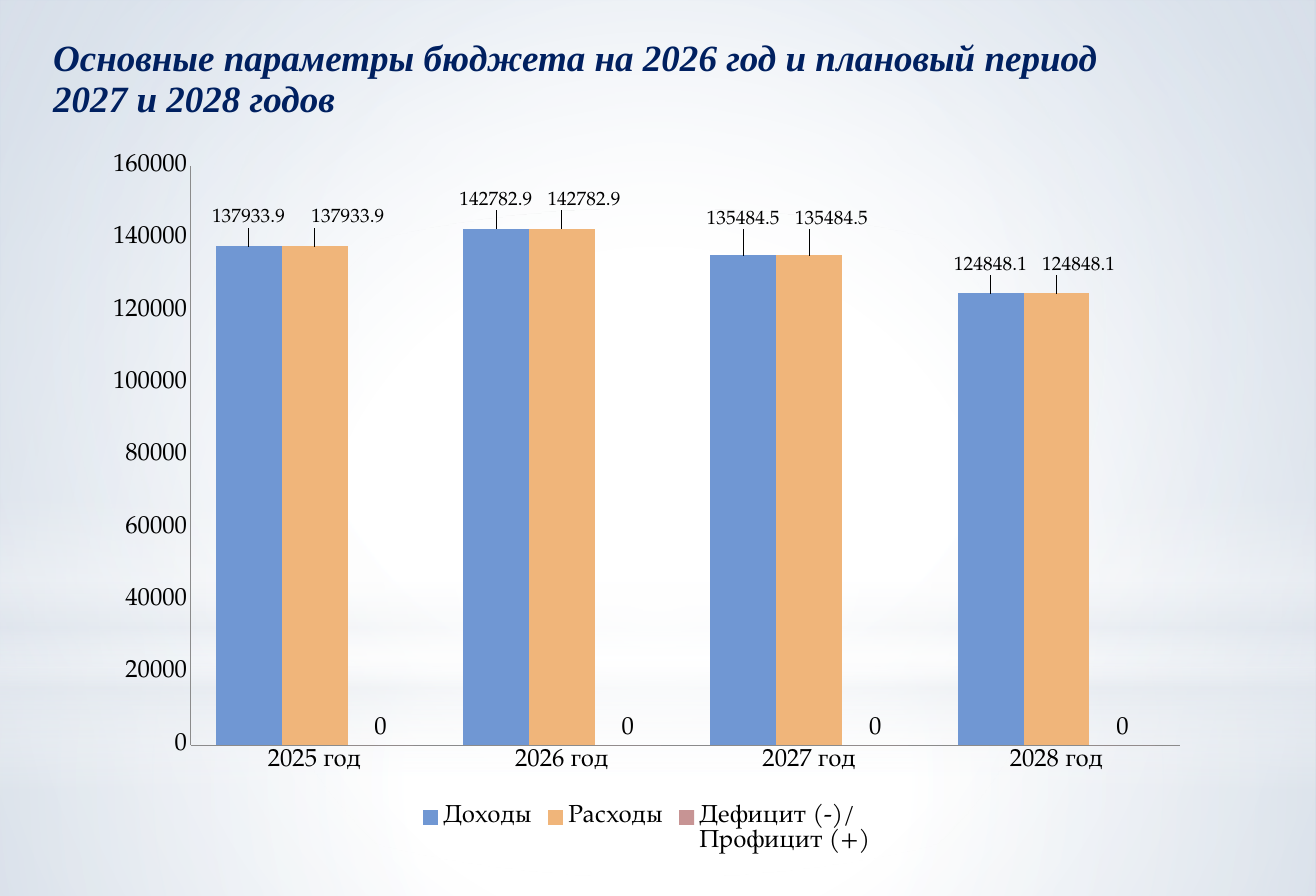
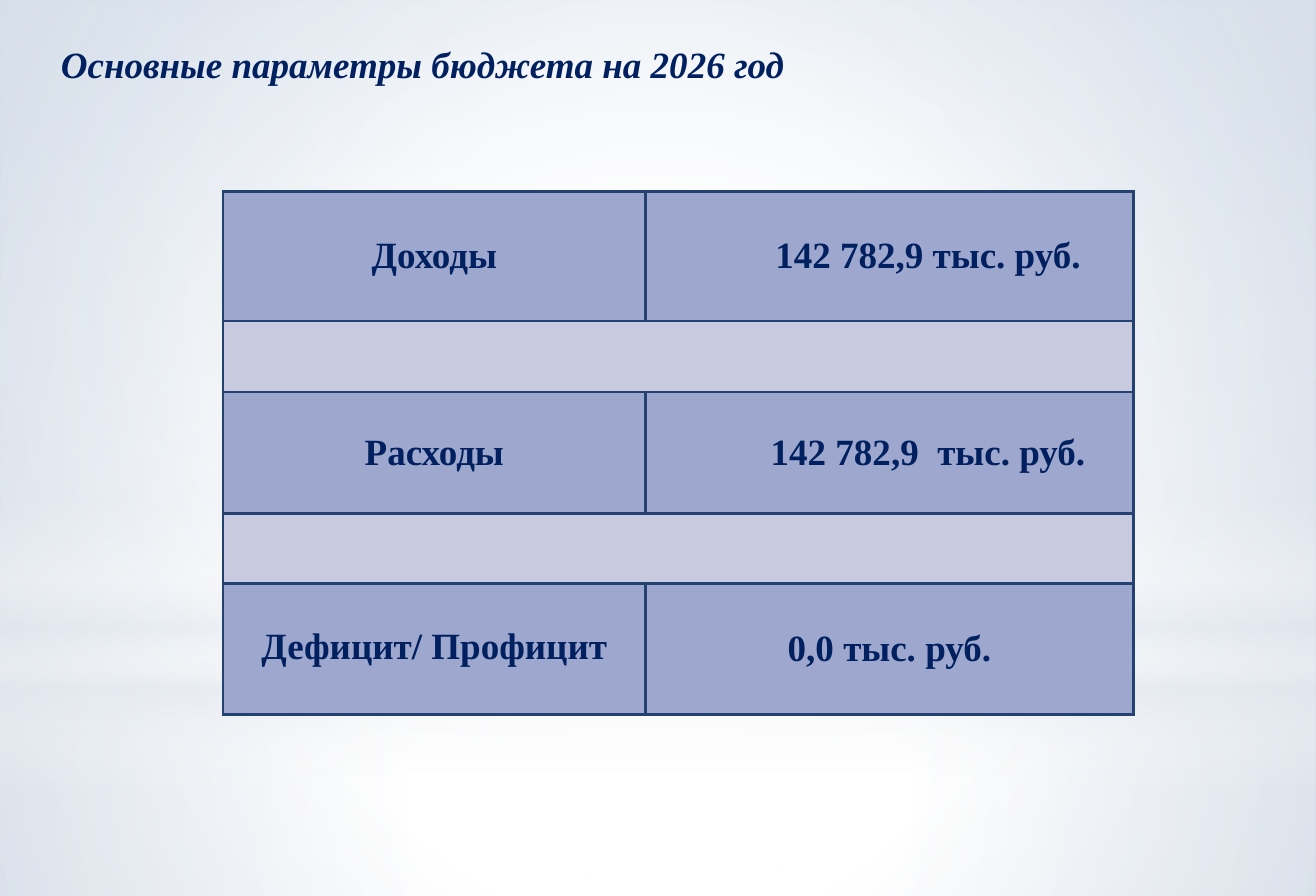
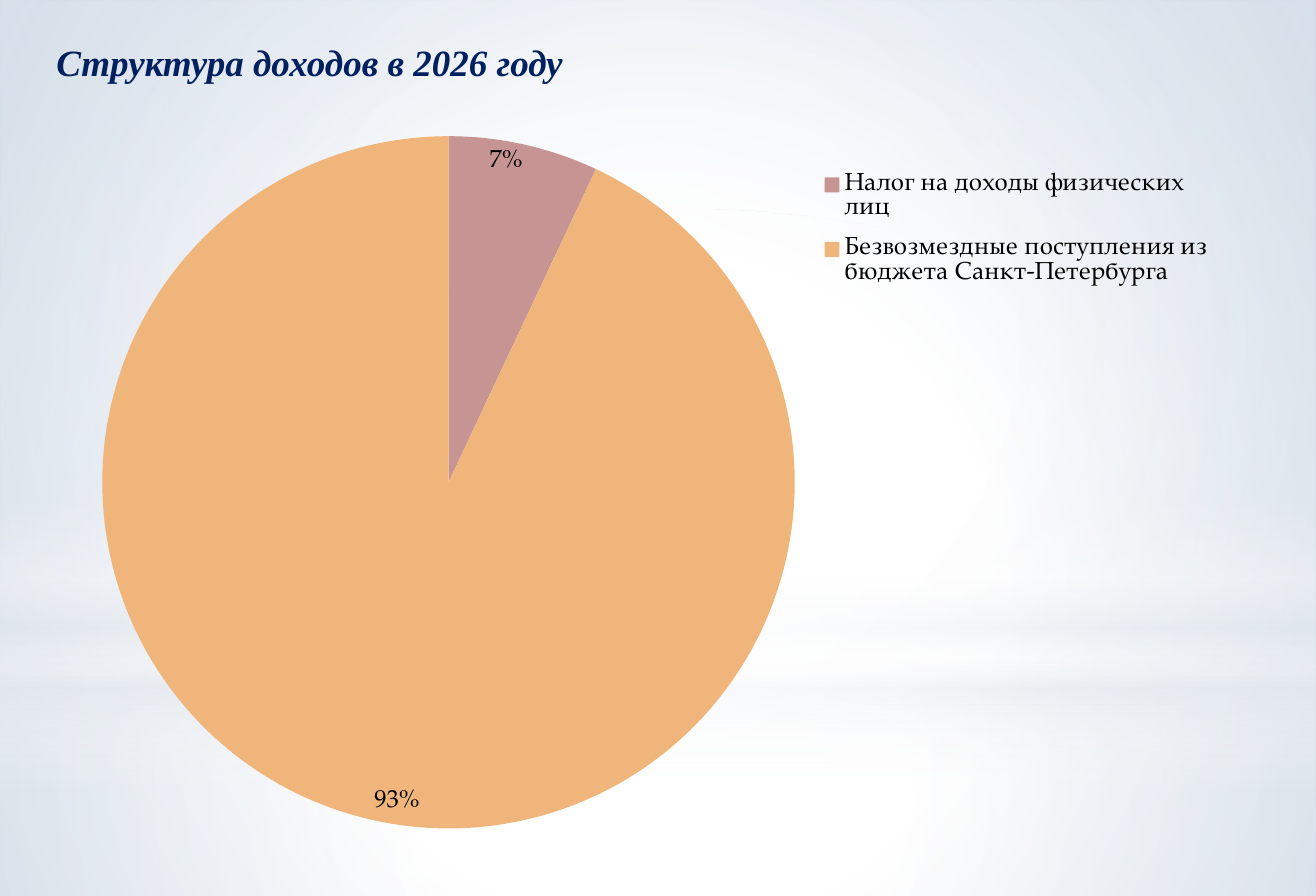
from lxml.etree import SubElement as Sub, Element
from pptx import Presentation
from pptx.chart.data import CategoryChartData as Data
from pptx.dml.color import RGBColor as RGB
from pptx.enum.chart import XL_CHART_TYPE as Kind, XL_LABEL_POSITION as Spot
from pptx.enum.chart import XL_LEGEND_POSITION as Side, XL_TICK_MARK as Tick
from pptx.enum.shapes import MSO_SHAPE as Form
from pptx.enum.text import MSO_ANCHOR as Anchor, PP_ALIGN as Align
from pptx.oxml.ns import qn
from pptx.util import Cm, Pt

HUES = {
    "white": "FFFFFF", "mist": "E4E9EF", "sky": "AABDD5",
    "navy": "002060", "black": "000000", "axis": "8B8B8B",
    "blue": "7097D3", "sand": "F0B57A", "rose": "C79494",
    "edge": "234271", "cell": "9EA8CE", "gap": "C8CADF",
}
SERIF, BOOK = "Times New Roman", "TeX Gyre Pagella"
WIDE, HIGH = 33.86, 23.06


def shade(item, fill, stops, rect=None):
    """Fill item with a gradient: round about rect, or downward without it."""
    fill.gradient()
    grad = item.element.find(".//" + qn("a:gradFill"))
    for kid in list(grad):
        grad.remove(kid)
    row = Sub(grad, qn("a:gsLst"))
    for pos, hue, alpha in stops:
        stop = Sub(row, qn("a:gs"), pos=str(pos * 1000))
        tint = Sub(stop, qn("a:srgbClr"), val=HUES[hue])
        Sub(tint, qn("a:alpha"), val=str(alpha * 1000))
    if rect:
        way = Sub(grad, qn("a:path"), path="circle")
        Sub(way, qn("a:fillToRect"), {k: str(v * 1000) for k, v in zip("ltrb", rect)})
    else:
        Sub(grad, qn("a:lin"), ang="5400000", scaled="0")


def place(node, at, tags):
    """Give a chart part a manual layout, as child number at."""
    for old in node.findall(qn("c:layout")):
        node.remove(old)
    lay = Element(qn("c:layout"))
    node.insert(at, lay)
    man = Sub(lay, qn("c:manualLayout"))
    for tag, val in tags.items():
        Sub(man, qn("c:" + tag), val=str(val))


deck = Presentation()
deck.slide_width, deck.slide_height = Cm(WIDE), Cm(HIGH)
blank = deck.slide_layouts[6]

# Slides and their titles
HEADS = [
    ("Основные параметры бюджета на 2026 год и плановый период 2027 и 2028 годов",
     1.37, 0.99, 0.93),
    ("Основные параметры бюджета на 2026 год", 1.57, 1.07, 1),
    ("Структура доходов в 2026 году", 1.45, 1.02, 1),
]
slides = []
for text, left, top, space in HEADS:
    slide = deck.slides.add_slide(blank)
    slides.append(slide)
    frame = slide.shapes.add_textbox(Cm(left), Cm(top), Cm(28.63), Cm(1.2)).text_frame
    frame.word_wrap = True
    frame.margin_left = frame.margin_right = frame.margin_top = frame.margin_bottom = 0
    frame.text = text
    para = frame.paragraphs[0]
    para.line_spacing = space
    font = para.runs[0].font
    font.name, font.size, font.bold, font.italic = SERIF, Pt(27), True, True
    font.color.rgb = RGB.from_string(HUES["navy"])

# Shared backdrop on the master
master = deck.slide_master
shade(master, master.background.fill,
      [(0, "white", 100), (42, "white", 100), (100, "sky", 100)], (24, 44, 24, 12))
MID = (50, 50, 50, 50)
BANDS = [
    (Form.RECTANGLE, 17.17, 5.89,
     [(0, "white", 91), (37, "white", 76), (100, "mist", 79)], MID),
    (Form.RECTANGLE, 0, 17.17,
     [(0, "white", 89), (48, "white", 62), (100, "mist", 79)], MID),
    (Form.RECTANGLE, 12.67, 7.7,
     [(0, "white", 0), (29, "white", 30), (45, "mist", 40),
      (55, "white", 26), (65, "mist", 60), (100, "white", 0)], None),
    (Form.OVAL, 5.38, 17.17, [(0, "white", 100), (56, "white", 0)], MID),
]
for spot, (form, top, high, stops, rect) in enumerate(BANDS):
    band = slides[0].shapes.add_shape(form, 0, Cm(top), Cm(WIDE), Cm(high))
    band.shadow.inherit = False
    band.line.fill.background()
    shade(band, band.fill, stops, rect)
    master.shapes.element.insert(2 + spot, band.element)

# Column chart
data = Data()
data.categories = [f"{year} год" for year in range(2025, 2029)]
sums = [137933.9, 142782.9, 135484.5, 124848.1]
data.add_series("Доходы", sums)
data.add_series("Расходы", sums)
data.add_series("Дефицит (-)/\nПрофицит (+)", [0] * 4)
bars = slides[0].shapes.add_chart(Kind.COLUMN_CLUSTERED, Cm(2.34), Cm(3.73),
                                  Cm(28.6), Cm(18.39), data).chart
plot = bars.plots[0]
plot.gap_width, plot.overlap, plot.vary_by_categories = 75, 0, False
for ser, hue in zip(plot.series, ("blue", "sand", "rose")):
    ser.format.fill.solid()
    ser.format.fill.fore_color.rgb = RGB.from_string(HUES[hue])
    ser.data_labels.show_value = True
    ser.data_labels.position = Spot.OUTSIDE_END
for ser in list(plot.series)[:2]:
    for num in range(len(sums)):
        label = ser.points[num].data_label
        label.font.size = Pt(14)
        label.position = Spot.OUTSIDE_END
for axis in (bars.category_axis, bars.value_axis):
    axis.has_major_gridlines = False
    axis.major_tick_mark = axis.minor_tick_mark = Tick.NONE
    axis.format.line.color.rgb = RGB.from_string(HUES["axis"])
bars.value_axis.minimum_scale, bars.value_axis.maximum_scale = 0, 160000
bars.value_axis.major_unit = 20000

# Label shifts: first the income bars, then the spending bars
SHIFTS = [(0, -0.02), (0, -0.02), (0, -0.03), (0, -0.02),
          (0.03, -0.02), (0.02, -0.02), (0.02, -0.03), (0.02, -0.02)]
for node, (x, y) in zip(bars.element.iter(qn("c:dLbl")), SHIFTS):
    place(node, 1, {"x": x, "y": y})

# Table
table = slides[1].shapes.add_table(5, 2, Cm(5.74), Cm(4.93), Cm(23.42), Cm(13.46)).table
table.first_row = table.horz_banding = False
for col, wide in zip(table.columns, (10.87, 12.55)):
    col.width = Cm(wide)
for row, high in zip(table.rows, (3.33, 1.83, 3.12, 1.8, 3.38)):
    row.height = Cm(high)
ROWS = [("Доходы", "142 782,9 тыс. руб."), None,
        ("Расходы", "142 782,9  тыс. руб."), None,
        ("Дефицит/ Профицит", "0,0 тыс. руб.")]
for r, words in enumerate(ROWS):
    if not words:
        table.cell(r, 0).merge(table.cell(r, 1))
    for c in range(2):
        cell = table.cell(r, c)
        props = cell._tc.get_or_add_tcPr()
        for side in "LRTB":
            line = Sub(props, qn("a:ln" + side), w=str(Pt(2.25)))
            Sub(Sub(line, qn("a:solidFill")), qn("a:srgbClr"), val=HUES["edge"])
        cell.fill.solid()
        cell.fill.fore_color.rgb = RGB.from_string(HUES["cell" if words else "gap"])
        if not words:
            continue
        cell.margin_left = cell.margin_right = cell.margin_top = cell.margin_bottom = 0
        if c == 1 and r < 4:
            cell.margin_left = Cm(1.98)
        cell.vertical_anchor = Anchor.MIDDLE
        cell.text_frame.text = words[c]
        para = cell.text_frame.paragraphs[0]
        para.alignment = Align.CENTER
        if (r, c) == (4, 0):
            para.line_spacing = 0.86
        font = para.runs[0].font
        font.name, font.size, font.bold = SERIF, Pt(27), True
        font.color.rgb = RGB.from_string(HUES["navy"])

# Pie chart
data = Data()
data.categories = ["Налог на доходы физических лиц",
                   "Безвозмездные поступления из\nбюджета Санкт-Петербурга"]
data.add_series("Доходы", [7, 93])
pie = slides[2].shapes.add_chart(Kind.PIE, Cm(2.34), Cm(3.12),
                                 Cm(29.21), Cm(18.59), data).chart
plot = pie.plots[0]
for num, hue in enumerate(("rose", "sand")):
    fill = plot.series[0].points[num].format.fill
    fill.solid()
    fill.fore_color.rgb = RGB.from_string(HUES[hue])
labels = plot.series[0].data_labels
labels.show_value, labels.show_percentage = False, True
labels.number_format, labels.number_format_is_linked = "0%", False
labels.position = Spot.INSIDE_END

# Shared chart style, plot areas and legends
EDGE = {"xMode": "edge", "yMode": "edge"}
for chart, side, box in (
        (bars, Side.BOTTOM, {"x": 0.09, "y": 0.03, "w": 0.89, "h": 0.81}),
        (pie, Side.RIGHT, {"x": 0.01, "y": 0.02, "w": 0.61, "h": 0.96})):
    chart.has_title = False
    chart.font.name, chart.font.size = BOOK, Pt(18)
    chart.font.color.rgb = RGB.from_string(HUES["black"])
    chart.has_legend = True
    chart.legend.position = side
    chart.legend.include_in_layout = False
    area = chart.element.find(".//" + qn("c:plotArea"))
    place(area, 0, {"layoutTarget": "inner", **EDGE, **box})
place(pie.element.find(".//" + qn("c:legend")), 1,
      {**EDGE, "x": 0.64, "y": 0.05, "w": 0.35, "h": 0.2})

deck.save("out.pptx")
